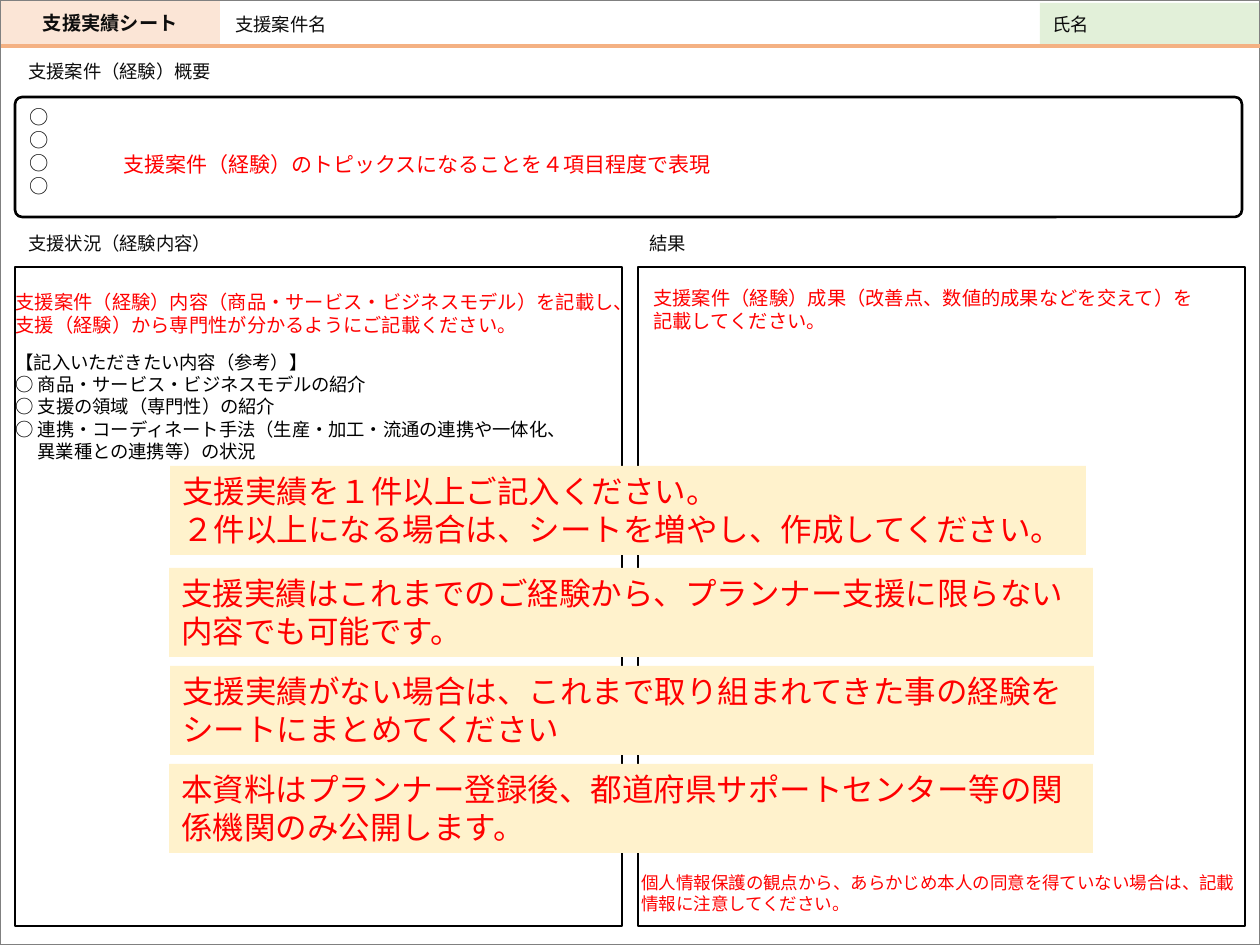
import pptx
import pptx.dml.color
import pptx.enum.shapes
import pptx.enum.text
import pptx.oxml.ns
import pptx.util
from lxml import etree

FONT = "Noto Sans CJK JP"
INK, BLACK, RED = "0D0D0D", "000000", "FF0000"
ALIGN = pptx.enum.text.PP_ALIGN
ANCHOR = pptx.enum.text.MSO_ANCHOR
SHAPE = pptx.enum.shapes.MSO_SHAPE


def px(length):
    return pptx.util.Emu(round(length * 914400 / 126))


def color(value):
    return pptx.dml.color.RGBColor.from_string(value)


def apply(target, values):
    for name, value in values.items():
        setattr(target, name, value)


def place(item, box):
    apply(item, dict(zip(("left", "top", "width", "height"), map(px, box))))


def paint(item, fill=None, line=None, weight=0.75):
    if fill:
        item.fill.solid()
        item.fill.fore_color.rgb = color(fill)
    else:
        item.fill.background()
    if line:
        item.line.color.rgb = color(line)
        item.line.width = pptx.util.Pt(weight)
    else:
        item.line.fill.background()


def prepare(item, anchor=ANCHOR.TOP, wrap=True):
    apply(item.text_frame, {
        "word_wrap": wrap,
        "auto_size": pptx.enum.text.MSO_AUTO_SIZE.NONE,
        "vertical_anchor": anchor,
        "margin_left": px(12.6), "margin_right": px(12.6),
        "margin_top": px(6.3), "margin_bottom": px(6.3),
    })


def write(item, lines, size, ink=INK, bold=False, align=ALIGN.LEFT,
          hang=0, gap=0, more=False):
    frame = item.text_frame
    for index, line in enumerate(lines):
        first = index == 0 and not more
        paragraph = frame.paragraphs[0] if first else frame.add_paragraph()
        paragraph.text = line
        properties = paragraph._p.get_or_add_pPr()
        properties.set("marL", str(px(hang)))
        properties.set("indent", str(-px(hang)))
        etree.SubElement(properties, pptx.oxml.ns.qn("a:buNone"))
        apply(paragraph, {
            "alignment": align,
            "line_spacing": pptx.util.Pt(size * 1.2),
            "space_before": pptx.util.Pt(0 if index else gap),
        })
        for run in paragraph.runs:
            apply(run.font, {"name": FONT, "size": pptx.util.Pt(size), "bold": bold})
            run.font.color.rgb = color(ink)
            east_asian = etree.SubElement(run.font._element, pptx.oxml.ns.qn("a:ea"))
            east_asian.set("typeface", FONT)


def add_panel(slide, box, kind=SHAPE.RECTANGLE, **look):
    panel = slide.shapes.add_shape(kind, *map(px, box))
    panel.shadow.inherit = False
    paint(panel, **look)
    return panel


def add_label(slide, box, lines, size, ink=INK, anchor=ANCHOR.TOP, wrap=False):
    label = slide.shapes.add_textbox(*map(px, box))
    prepare(label, anchor, wrap)
    write(label, lines, size, ink)


def add_notice(slide, box, lines):
    notice = add_panel(slide, box, fill="FFF2CC")
    prepare(notice)
    write(notice, lines, 18, RED)


def add_rule(slide, start, end, ink, weight):
    rule = slide.shapes.add_connector(
        pptx.enum.shapes.MSO_CONNECTOR.STRAIGHT, *map(px, start + end))
    rule.line.color.rgb = color(ink)
    rule.line.width = pptx.util.Pt(weight)
    etree.SubElement(rule._element.spPr, pptx.oxml.ns.qn("a:effectLst"))


def add_header(slide):
    title = slide.shapes.title
    place(title, (1, 1, 219, 43))
    paint(title, fill="FBE5D6")
    prepare(title, ANCHOR.MIDDLE)
    write(title, ["支援実績シート"], 11, bold=True, align=ALIGN.CENTER)
    person = add_panel(slide, (1040, 3, 219, 43), fill="E2F0D9")
    prepare(person, ANCHOR.MIDDLE)
    write(person, ["氏名"], 10.5)
    add_label(slide, (223, 3, 818, 43), ["支援案件名"], 10.5, anchor=ANCHOR.MIDDLE)
    add_rule(slide, (1, 46), (1260, 46), "F4B183", 2.25)


def add_overview(slide):
    topics = add_panel(slide, (15, 97, 1227, 120), SHAPE.ROUNDED_RECTANGLE,
                       line=BLACK, weight=1.5)
    topics.adjustments[0] = 0.06
    prepare(topics)
    write(topics, ["○"] * 4, 11)
    add_label(slide, (16, 54, 210, 35), ["支援案件（経験）概要"], 10.5)
    add_label(slide, (111, 145, 619, 38),
              ["支援案件（経験）のトピックスになることを４項目程度で表現"], 12, RED)


def add_columns(slide):
    for left, heading_left, heading in ((15, 16, "支援状況（経験内容）"), (638, 637, "結果")):
        add_panel(slide, (left, 267, 607, 659), line=BLACK, weight=1.5)
        add_label(slide, (heading_left, 226, 210, 35), [heading], 10.5)

    details = slide.placeholders[1]
    place(details, (3, 284, 648, 200))
    prepare(details)
    write(details, ["支援案件（経験）内容（商品・サービス・ビジネスモデル）を記載し、",
                    "支援（経験）から専門性が分かるようにご記載ください。"], 11, RED)
    write(details, ["【記入いただきたい内容（参考）】"], 10.5, BLACK, gap=8.5, more=True)
    write(details, ["○ 商品・サービス・ビジネスモデルの紹介",
                    "○ 支援の領域（専門性）の紹介",
                    "○ 連携・コーディネート手法（生産・加工・流通の連携や一体化、\v異業種との連携等）の状況"],
          10.5, BLACK, hang=22, more=True)

    add_label(slide, (641, 280, 572, 74),
              ["支援案件（経験）成果（改善点、数値的成果などを交えて）を記載してください。"],
              11, RED, wrap=True)
    add_label(slide, (629, 866, 630, 55),
              ["個人情報保護の観点から、あらかじめ本人の同意を得ていない場合は、記載情報に注意してください。"],
              10, RED, wrap=True)


def main():
    deck = pptx.Presentation()
    apply(deck, {"slide_width": px(1260), "slide_height": px(945)})
    slide = deck.slides.add_slide(deck.slide_layouts[1])
    add_panel(slide, (0, 0, 1260, 945), line="808080")
    add_header(slide)
    add_overview(slide)
    add_columns(slide)
    notices = (
        ((170, 466, 916, 89), ["支援実績を１件以上ご記入ください。",
                               "２件以上になる場合は、シートを増やし、作成してください。"]),
        ((169, 568, 924, 89), ["支援実績はこれまでのご経験から、プランナー支援に限らない内容でも可能です。"]),
        ((170, 666, 924, 89), ["支援実績がない場合は、これまで取り組まれてきた事の経験を",
                               "シートにまとめてください"]),
        ((169, 764, 924, 89), ["本資料はプランナー登録後、都道府県サポートセンター等の関係機関のみ公開します。"]),
    )
    for box, lines in notices:
        add_notice(slide, box, lines)
    deck.save("out.pptx")


if __name__ == "__main__":
    main()
